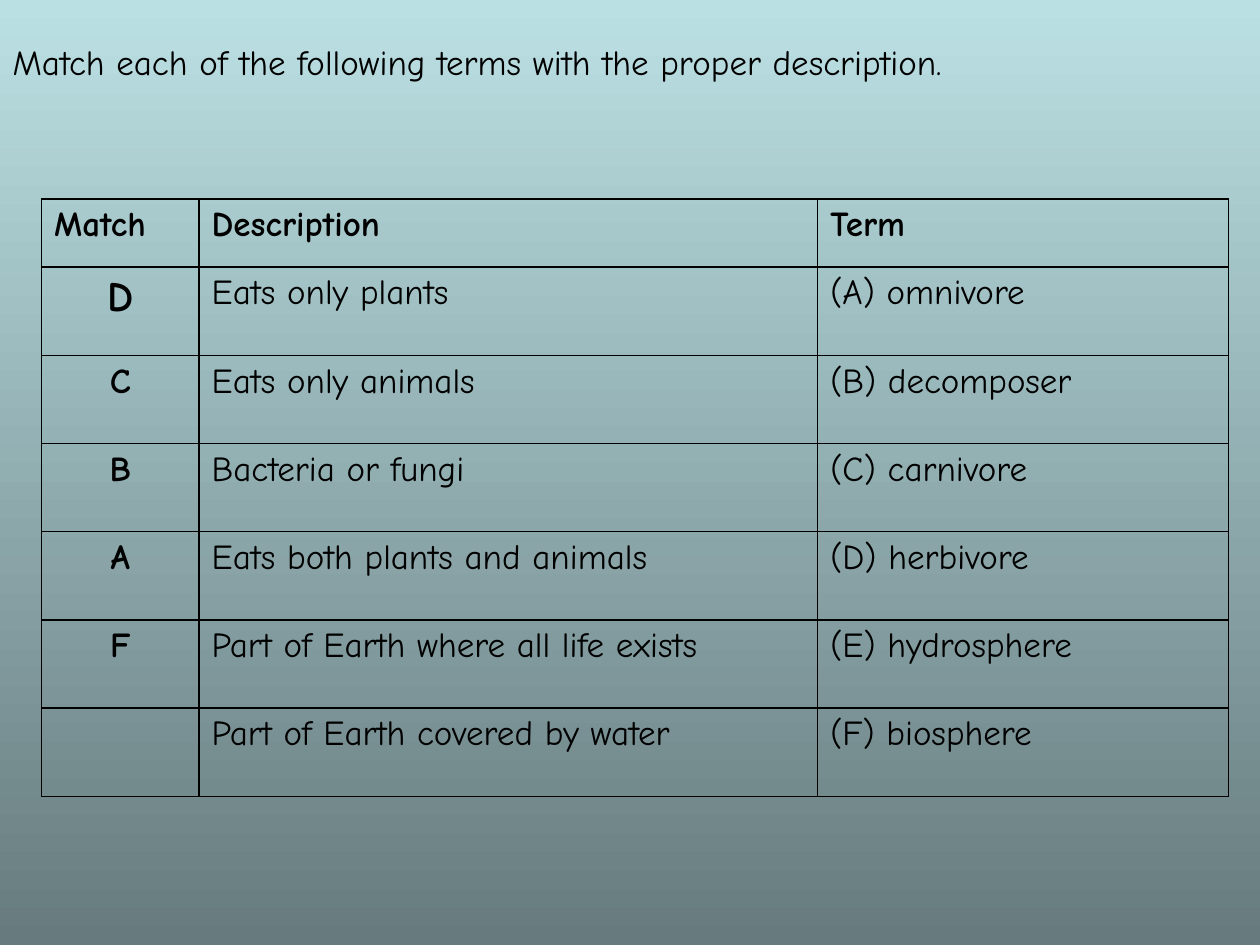
from pptx import Presentation
from pptx.dml.color import RGBColor
from pptx.enum.text import MSO_ANCHOR, PP_ALIGN
from pptx.oxml import parse_xml
from pptx.oxml.ns import nsdecls
from pptx.util import Inches, Pt

TOP = MSO_ANCHOR.TOP
LEFT, CENTER = PP_ALIGN.LEFT, PP_ALIGN.CENTER
FONT = "Comic Neue"
COLORS = {"ink": "000000", "sky": "BBE0E3", "slate": "677B7E"}
COLUMNS = [1.25, 4.91, 3.26]
HEADER_HEIGHT, ROW_HEIGHT = 0.54, 0.7
HEADER = ["Match", "Description", "Term"]
ROWS = [
    ("D", "Eats only plants", "(A) omnivore"),
    ("C", "Eats only animals", "(B) decomposer"),
    ("B", "Bacteria or fungi", "(C) carnivore"),
    ("A", "Eats both plants and animals", "(D) herbivore"),
    ("F", "Part of Earth where all life exists", "(E) hydrosphere"),
    ("", "Part of Earth covered by water", "(F) biosphere"),
]


def rgb(name):
    return RGBColor.from_string(COLORS[name])


def write(tf, text, size=20, bold=False, align=LEFT):
    p = tf.paragraphs[0]
    p.alignment = align
    p.font.size = Pt(size)
    if text:
        r = p.add_run()
        r.text = text
        r.font.name = FONT
        r.font.size = Pt(size)
        r.font.bold = bold
        r.font.color.rgb = rgb("ink")


def paint_background(s):
    fill = s.background.fill
    fill.gradient()
    fill.gradient_angle = 270
    for stop, name in zip(fill.gradient_stops, ("sky", "slate")):
        stop.color.rgb = rgb(name)


def add_title(s, text):
    title = s.shapes.title
    title.left, title.top = 0, Inches(0.25)
    title.width, title.height = Inches(10), Inches(1.03)
    tf = title.text_frame
    tf.word_wrap = True
    tf.vertical_anchor = TOP
    tf.margin_top = Inches(0.07)
    write(tf, text)


def outline(cell, width=1):
    tcPr = cell._tc.get_or_add_tcPr()
    for i, side in enumerate(("lnL", "lnR", "lnT", "lnB")):
        tcPr.insert(i, parse_xml(
            f'<a:{side} {nsdecls("a")} w="{Pt(width)}"><a:solidFill>'
            f'<a:srgbClr val="{COLORS["ink"]}"/></a:solidFill></a:{side}>'))


def add_match_table(s, left, top):
    height = HEADER_HEIGHT + ROW_HEIGHT * len(ROWS)
    table = s.shapes.add_table(
        len(ROWS) + 1, len(COLUMNS), Inches(left), Inches(top),
        Inches(sum(COLUMNS)), Inches(height)).table
    table.first_row = table.horz_banding = False
    for column, width in zip(table.columns, COLUMNS):
        column.width = Inches(width)
    for i, texts in enumerate([HEADER, *ROWS]):
        table.rows[i].height = Inches(ROW_HEIGHT if i else HEADER_HEIGHT)
        for j, text in enumerate(texts):
            cell = table.cell(i, j)
            cell.fill.background()
            outline(cell)
            is_answer = i > 0 and j == 0
            write(cell.text_frame, text,
                  size=24 if is_answer and i == 1 else 20,
                  bold=i == 0 or is_answer,
                  align=CENTER if is_answer else LEFT)


def main():
    prs = Presentation()
    prs.slide_width, prs.slide_height = Inches(10), Inches(7.5)
    s = prs.slides.add_slide(prs.slide_layouts[5])
    paint_background(s)
    add_title(s, "Match each of the following terms with the proper description.")
    add_match_table(s, 0.33, 1.58)
    prs.save("out.pptx")


if __name__ == "__main__":
    main()
